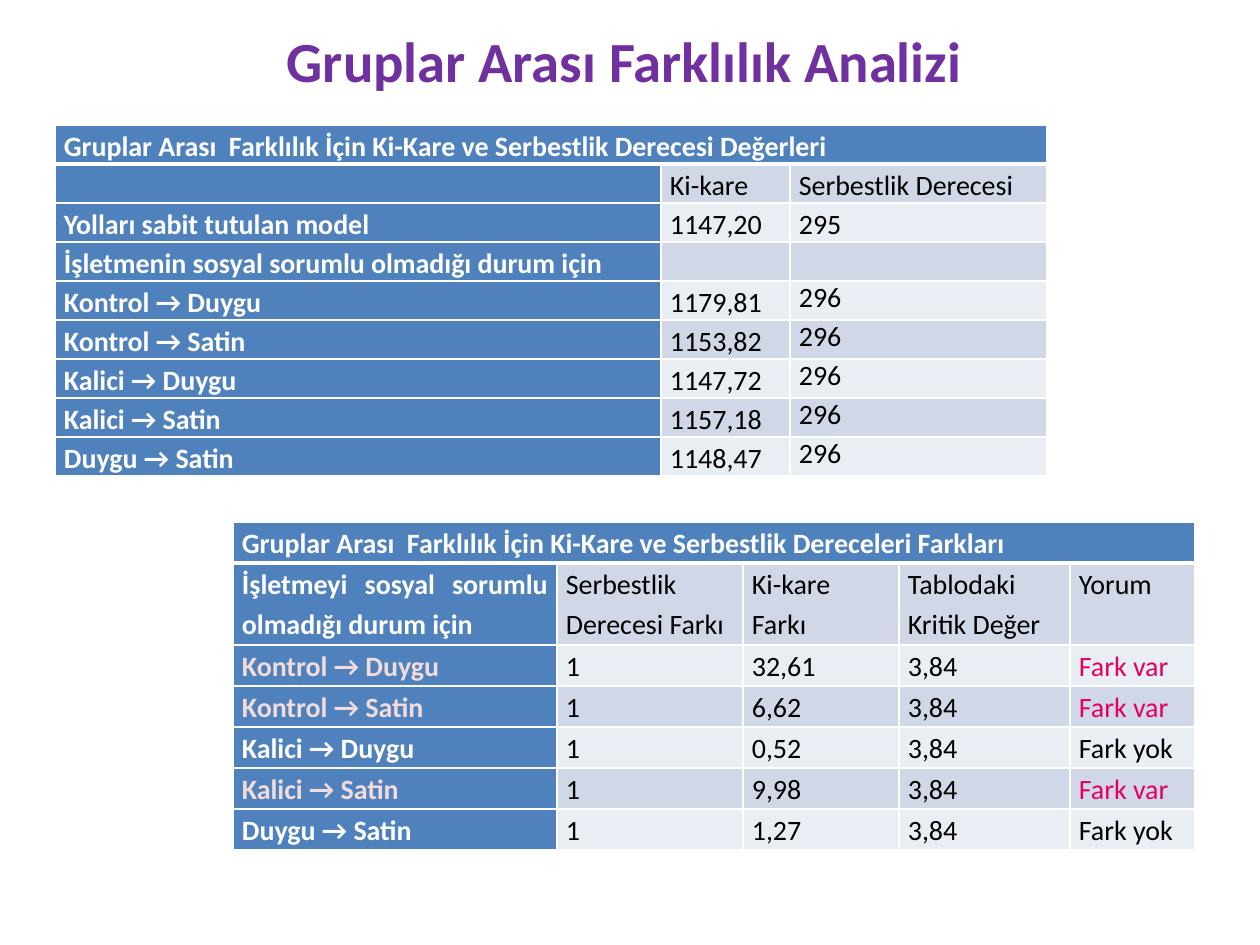
import dataclasses

import lxml.etree
import pptx
import pptx.dml.color
import pptx.enum.text
import pptx.oxml.ns
import pptx.util

EMU_PER_PX = 914400 / 126
FONT = "Calibri"
WHITE, BLACK, PURPLE = "FFFFFF", "000000", "7030A0"
BLUE, DARK_BAND, LIGHT_BAND = "4F81BD", "D0D8E8", "E9EDF4"
PALE_PINK, PINK = "F2DCDB", "E6005D"
DIFFERENT, SAME = "Fark var", "Fark yok"
CELL_MARGIN = 9
ALIGNMENTS = {
    "l": pptx.enum.text.PP_ALIGN.LEFT,
    "j": pptx.enum.text.PP_ALIGN.JUSTIFY,
    "c": pptx.enum.text.PP_ALIGN.CENTER,
}


@dataclasses.dataclass
class Row:
    cells: list[str]
    aligns: str
    height: int


@dataclasses.dataclass
class Grid:
    left: int
    top: int
    columns: list[int]
    title: str
    title_height: int
    rows: list[Row]


GRIDS = [
    Grid(55, 125, [606, 129, 257],
         "Gruplar Arası  Farklılık İçin Ki-Kare ve Serbestlik Derecesi Değerleri", 39, [
             Row(["", "Ki-kare", "Serbestlik Derecesi"], "jjj", 39),
             Row(["Yolları sabit tutulan model", "1147,20", "295"], "jjj", 39),
             Row(["İşletmenin sosyal sorumlu olmadığı durum için", "", ""], "jjj", 39),
             Row(["Kontrol → Duygu", "1179,81", "296"], "jjl", 39),
             Row(["Kontrol → Satin", "1153,82", "296"], "ljl", 39),
             Row(["Kalici → Duygu", "1147,72", "296"], "ljl", 39),
             Row(["Kalici → Satin", "1157,18", "296"], "ljl", 39),
             Row(["Duygu → Satin", "1148,47", "296"], "ljl", 39),
         ]),
    Grid(233, 522, [324, 186, 156, 171, 125],
         "Gruplar Arası  Farklılık İçin Ki-Kare ve Serbestlik Dereceleri Farkları", 41, [
             Row(["İşletmeyi sosyal sorumlu olmadığı durum için", "Serbestlik Derecesi Farkı",
                  "Ki-kare Farkı", "Tablodaki Kritik Değer", "Yorum"], "jjjjj", 82),
             Row(["Kontrol → Duygu", "1", "32,61", "3,84", DIFFERENT], "jjjjj", 41),
             Row(["Kontrol → Satin", "1", "6,62", "3,84", DIFFERENT], "lljlj", 41),
             Row(["Kalici → Duygu", "1", "0,52", "3,84", SAME], "lljlj", 41),
             Row(["Kalici → Satin", "1", "9,98", "3,84", DIFFERENT], "lljll", 41),
             Row(["Duygu → Satin", "1", "1,27", "3,84", SAME], "lljll", 41),
         ]),
]


def px(length: int) -> int:
    return round(length * EMU_PER_PX)


def color(value: str) -> pptx.dml.color.RGBColor:
    return pptx.dml.color.RGBColor.from_string(value)


def write(para, text: str, size: float, ink: str, bold: bool, align: str) -> None:
    para.alignment = ALIGNMENTS[align]
    span = para.add_run()
    span.text = text
    span.font.name = FONT
    span.font.size = pptx.util.Pt(size)
    span.font.bold = bold
    span.font.color.rgb = color(ink)


def add_borders(cell, top: int, bottom: int) -> None:
    properties = cell._tc.get_or_add_tcPr()
    qn = pptx.oxml.ns.qn
    for side, width in (("L", 1), ("R", 1), ("T", top), ("B", bottom)):
        line = lxml.etree.SubElement(properties, qn(f"a:ln{side}"), w=str(pptx.util.Pt(width)))
        fill = lxml.etree.SubElement(line, qn("a:solidFill"))
        lxml.etree.SubElement(fill, qn("a:srgbClr"), val=WHITE)


def style_cell(cell, fill: str, top: int, bottom: int) -> None:
    add_borders(cell, top, bottom)
    cell.fill.solid()
    cell.fill.fore_color.rgb = color(fill)
    cell.margin_left = cell.margin_right = px(CELL_MARGIN)
    cell.margin_top = cell.margin_bottom = 0


def write_cell(cell, text: str, ink: str, bold: bool, align: str) -> None:
    if not text:
        return
    para = cell.text_frame.paragraphs[0]
    write(para, text, 16, ink, bold, align)
    if text != "296":
        para.line_spacing = 1.15


def draw_grid(slide, grid: Grid) -> None:
    heights = [grid.title_height] + [row.height for row in grid.rows]
    frame = slide.shapes.add_table(len(heights), len(grid.columns), px(grid.left), px(grid.top),
                                   px(sum(grid.columns)), px(sum(heights)))
    table = frame.table
    table.horz_banding = False
    for column, width in zip(table.columns, grid.columns):
        column.width = px(width)
    for table_row, height in zip(table.rows, heights):
        table_row.height = px(height)

    for cell in table.rows[0].cells:
        style_cell(cell, BLUE, 1, 3)
    table.cell(0, 0).merge(table.cell(0, len(grid.columns) - 1))
    write_cell(table.cell(0, 0), grid.title, WHITE, True, "j")

    for index, row in enumerate(grid.rows, start=1):
        band = DARK_BAND if index % 2 else LIGHT_BAND
        label_ink = PALE_PINK if DIFFERENT in row.cells else WHITE
        for position, (text, align) in enumerate(zip(row.cells, row.aligns)):
            cell = table.cell(index, position)
            is_label = position == 0
            style_cell(cell, BLUE if is_label else band, 3 if index == 1 else 1, 1)
            value_ink = PINK if text == DIFFERENT else BLACK
            write_cell(cell, text, label_ink if is_label else value_ink, is_label, align)


def draw_title(slide, text: str) -> None:
    box = slide.shapes.add_textbox(px(64), px(16), px(1134), px(87))
    box.text_frame.word_wrap = True
    box.text_frame.vertical_anchor = pptx.enum.text.MSO_ANCHOR.MIDDLE
    write(box.text_frame.paragraphs[0], text, 32.4, PURPLE, True, "c")


def main() -> None:
    deck = pptx.Presentation()
    deck.slide_width, deck.slide_height = px(1260), px(945)
    page = deck.slides.add_slide(deck.slide_layouts[6])
    draw_title(page, "Gruplar Arası Farklılık Analizi ")
    for grid in GRIDS:
        draw_grid(page, grid)
    deck.save("out.pptx")


if __name__ == "__main__":
    main()
